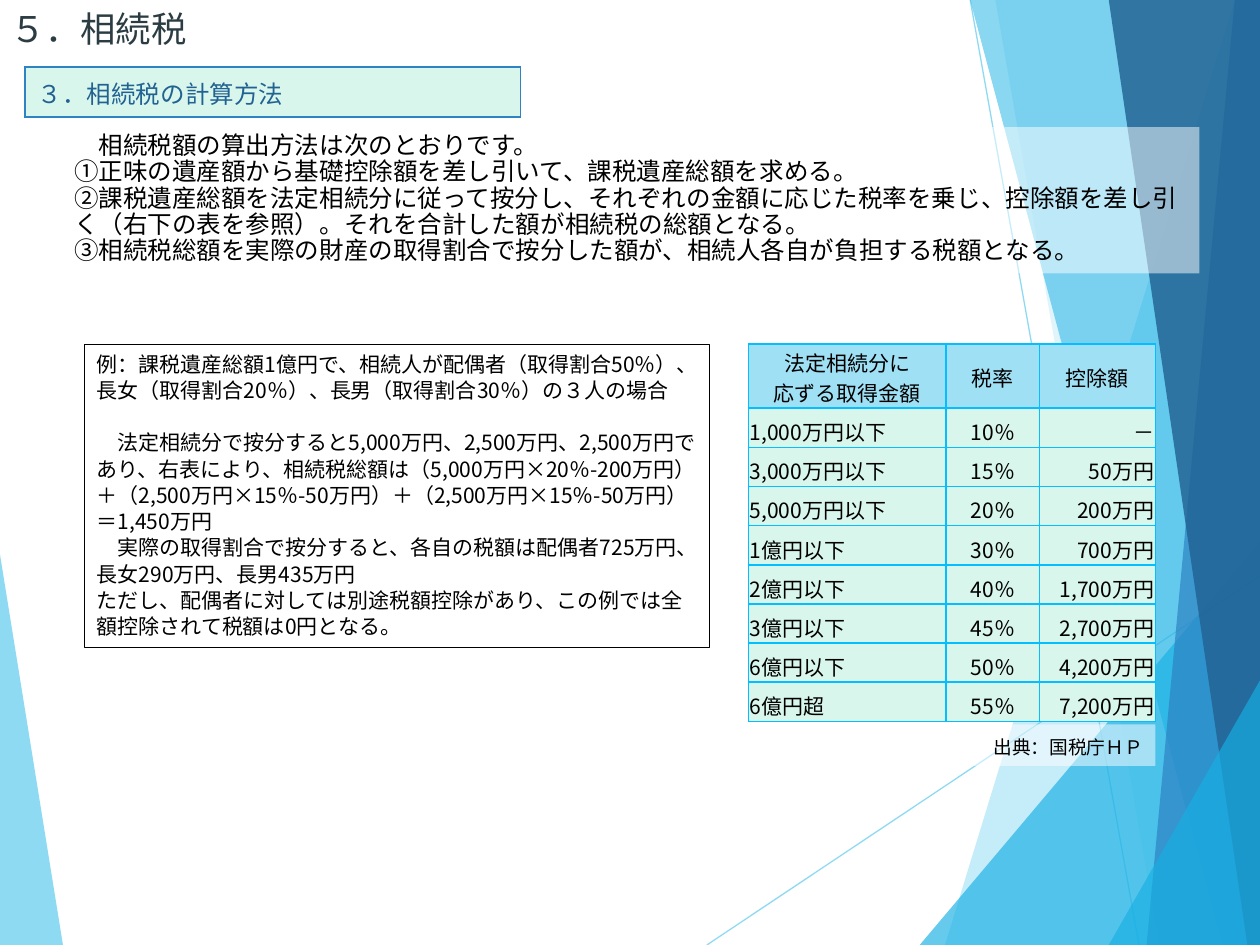
"""Build the inheritance tax slide on a grid of 100 columns by 75 rows."""
from lxml.etree import SubElement as Sub
from pptx import Presentation
from pptx.dml.color import RGBColor as RGB
from pptx.enum.shapes import MSO_CONNECTOR as Link
from pptx.enum.text import MSO_ANCHOR as Anchor, MSO_AUTO_SIZE as Auto, PP_ALIGN as Align
from pptx.oxml.ns import qn
from pptx.util import Inches, Pt

FONT = "Noto Sans CJK JP"
SKY = RGB(0x5F, 0xCB, 0xEF)
CYAN = RGB(0x17, 0xB0, 0xE4)
BLUE = RGB(0x2E, 0x83, 0xC3)
NAVY = RGB(0x22, 0x62, 0x92)
SLATE = RGB(0x2C, 0x3C, 0x43)
EDGE = RGB(0x05, 0xBE, 0xFF)
HEAD = RGB(0x9F, 0xE0, 0xF5)
MINT = RGB(0xD9, 0xF6, 0xEC)
WHITE = RGB(0xFF, 0xFF, 0xFF)
BLACK = RGB(0, 0, 0)

deck = Presentation()
deck.slide_width, deck.slide_height = Inches(10), Inches(7.5)
U = deck.slide_width // 100
slide = deck.slides.add_slide(deck.slide_layouts[6])
shapes = slide.shapes


def fade(shape, share):
    for tint in shape.element.iter(qn("a:srgbClr")):
        Sub(tint, qn("a:alpha"), val=str(share * 1000))


def write(frame, text, size, color, align=Align.LEFT, lead=None):
    frame.text = text
    for para in frame.paragraphs:
        para.alignment = align
        para.line_spacing = lead
        for run in para.runs:
            font = run.font
            font.size, font.name = Pt(size), FONT
            font.color.rgb = color
            Sub(font.element if hasattr(font, "element") else run._r.get_or_add_rPr(),
                qn("a:ea"), typeface=FONT)


shards = [
    (SKY, 70, [(0, 43.9), (4.9, 75), (0, 75)]),
    (SKY, 36, [(97.5, 0), (75.4, 75), (100, 75), (100, 0)]),
    (SKY, 20, [(78.8, 0), (91.9, 75), (100, 75), (100, 0)]),
    (CYAN, 66, [(72.6, 75), (100, 42.9), (100, 75)]),
    (CYAN, 50, [(76.7, 0), (97, 75), (100, 75), (100, 0)]),
    (BLUE, 70, [(98.1, 0), (90.7, 75), (100, 75), (100, 0)]),
    (NAVY, 82, [(88.5, 0), (98.8, 75), (100, 75), (100, 0)]),
    (CYAN, 66, [(88.2, 75), (100, 53.5), (100, 75)]),
]
rays = [(56.1, 75, 100, 45.7), (77, 0, 90.4, 75)]

for num, (color, share, dots) in enumerate(shards):
    if num == 1:
        for ray in rays:
            line = shapes.add_connector(Link.STRAIGHT, *[int(v * U) for v in ray])
            line.line.color.rgb = SKY
            line.line.width = Pt(0.75)
            fade(line, 70)
            Sub(line.element.spPr, qn("a:effectLst"))
    pen = shapes.build_freeform(*dots[0], scale=U)
    pen.add_line_segments(dots[1:], close=True)
    shard = pen.convert_to_shape()
    shard.shadow.inherit = False
    shard.fill.solid()
    shard.fill.fore_color.rgb = color
    shard.line.fill.background()
    fade(shard, share)

title = shapes.add_textbox(0, 0, 40 * U, int(4.5 * U))
frame = title.text_frame
frame.margin_top = frame.margin_bottom = frame.margin_right = 0
frame.margin_left = int(0.8 * U)
frame.vertical_anchor = Anchor.MIDDLE
frame.word_wrap = True
write(frame, "５．相続税", 20.2, SLATE)

rates = [
    ("法定相続分に\n応ずる取得金額", "税率", "控除額"),
    ("1,000万円以下", "10％", "－"),
    ("3,000万円以下", "15％", "50万円"),
    ("5,000万円以下", "20％", "200万円"),
    ("1億円以下", "30％", "700万円"),
    ("2億円以下", "40％", "1,700万円"),
    ("3億円以下", "45％", "2,700万円"),
    ("6億円以下", "50％", "4,200万円"),
    ("6億円超", "55％", "7,200万円"),
]
sides = (Align.LEFT, Align.CENTER, Align.RIGHT)
grids = [
    (2, 5.3, [39.3], [4], [("３．相続税の計算方法",)], 14, NAVY, BLUE, 1),
    (59.4, 27.3, [15.7, 7.4, 9.2], [5.1] + [3.11] * 8, rates, 12, BLACK, EDGE, 0.1),
]
for left, top, cols, rows, data, size, color, edge, pad in grids:
    box = [int(v * U) for v in (left, top, sum(cols), sum(rows))]
    table = shapes.add_table(len(rows), len(cols), *box).table
    for col, wide in zip(table.columns, cols):
        col.width = int(wide * U)
    for r, (row, tall) in enumerate(zip(table.rows, rows)):
        row.height = int(tall * U)
        head = r == 0 and len(rows) > 1
        for c, cell in enumerate(row.cells):
            cell.margin_left = cell.margin_right = int(pad * U)
            cell.margin_top = int((0.2 if head or pad == 1 else 0.6) * U)
            cell.margin_bottom = 0
            cell.vertical_anchor = Anchor.MIDDLE
            cell.fill.solid()
            cell.fill.fore_color.rgb = HEAD if head else MINT
            write(cell.text_frame, data[r][c], size, color,
                  Align.CENTER if head else sides[c])
            props = cell._tc.get_or_add_tcPr()
            for n, side in enumerate("LRTB"):
                rule = Sub(props, qn("a:ln" + side), w=str(Pt(1)))
                Sub(Sub(rule, qn("a:solidFill")), qn("a:srgbClr"), val=str(edge))
                props.insert(n, rule)

steps = """相続税額の算出方法は次のとおりです。
①正味の遺産額から基礎控除額を差し引いて、課税遺産総額を求める。
②課税遺産総額を法定相続分に従って按分し、それぞれの金額に応じた税率を乗じ、控除額を差し引く（右下の表を参照）。それを合計した額が相続税の総額となる。
③相続税総額を実際の財産の取得割合で按分した額が、相続人各自が負担する税額となる。"""
case = """例：課税遺産総額1億円で、相続人が配偶者（取得割合50％）、長女（取得割合20％）、長男（取得割合30％）の３人の場合
法定相続分で按分すると5,000万円、2,500万円、2,500万円であり、右表により、相続税総額は（5,000万円×20％-200万円）＋（2,500万円×15％-50万円）＋（2,500万円×15％-50万円）＝1,450万円
実際の取得割合で按分すると、各自の税額は配偶者725万円、長女290万円、長男435万円
ただし、配偶者に対しては別途税額控除があり、この例では全額控除されて税額は0円となる。"""
notes = [
    (4.9, 10.1, 90.3, 11.6, steps, 14, Align.LEFT, 15, [0]),
    (76.9, 57.5, 14.8, 3.3, "出典：国税庁ＨＰ", 10.7, Align.RIGHT, 16, []),
    (6.7, 27.3, 49.6, 24.1, case, 12, Align.LEFT, 15, [1, 2]),
]
for *box, text, size, align, lead, inset in notes:
    note = shapes.add_textbox(*[int(v * U) for v in box])
    note.fill.solid()
    note.fill.fore_color.rgb = WHITE
    fade(note, 50)
    frame = note.text_frame
    frame.word_wrap = True
    frame.auto_size = Auto.SHAPE_TO_FIT_TEXT
    write(frame, text, size, BLACK, align, Pt(lead))
    for n in inset:
        frame.paragraphs[n]._p.get_or_add_pPr().set("indent", str(Pt(size)))
    if text == case:
        frame.paragraphs[1].space_before = Pt(lead)
        note.line.color.rgb = BLACK
        note.line.width = Pt(0.25)

deck.save("out.pptx")
